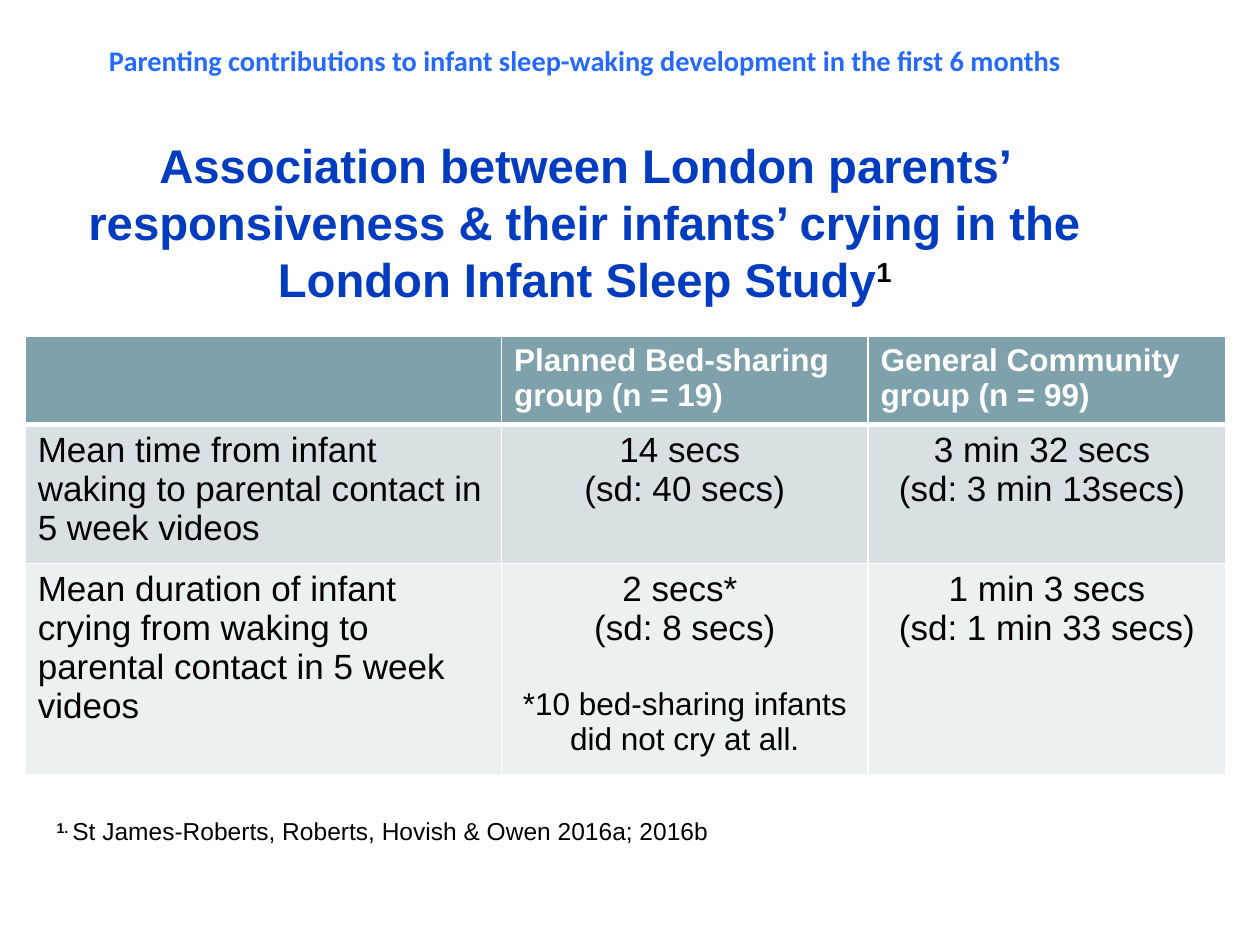
from lxml import etree
from pptx import Presentation
from pptx.dml.color import RGBColor
from pptx.enum import text as t
from pptx.oxml.ns import qn
from pptx.util import Inches, Pt

# Content: a run is (text, size, colour, bold, raised)
BLACK, WHITE, BLUE = "000000", "FFFFFF", "013CBF"
TOPIC = "Parenting contributions to infant sleep-waking development in the first 6 months"
TITLE = ("Association between London parents’ responsiveness & their infants’ "
         "crying in the London Infant Sleep Study")
SOURCE = "St James-Roberts, Roberts, Hovish & Owen 2016a; 2016b"
NOTE = "*10 bed-sharing infants did not cry at all."
ROWS = [
    [[], ["Planned Bed-sharing group (n = 19)"], ["General Community group (n = 99)"]],
    [["Mean time from infant waking to parental contact in 5 week videos"],
     ["14 secs ", "(sd: 40 secs)"],
     ["3 min 32 secs ", "(sd: 3 min 13secs) "]],
    [["Mean duration of infant crying from waking to parental contact in 5 week videos"],
     ["2 secs* ", "(sd: 8 secs)", NOTE],
     ["1 min 3 secs", "(sd: 1 min 33 secs)"]],
]
FILLS = ["7FA1AC", "D8E0E3", "ECF0F1"]
WIDTHS = [3.78, 2.91, 2.84]
HEIGHTS = [0.65, 1.03, 1.59]


def color(code):
    return RGBColor.from_string(code)


def add_run(para, words, size, code=BLACK, bold=False, raised=False, face="Arial"):
    run = para.add_run()
    run.text = words
    font = run.font
    font.name, font.size, font.bold = face, Pt(size), bold
    font.color.rgb = color(code)
    if raised:
        run._r.get_or_add_rPr().set("baseline", "30000")


def add_box(slide, left, top, width, height):
    box = slide.shapes.add_textbox(*map(Inches, (left, top, width, height)))
    box.text_frame.word_wrap = True
    return box.text_frame


def add_edge(cell, side, points):
    line = etree.SubElement(cell._tc.get_or_add_tcPr(), qn("a:" + side),
                            w=str(Pt(points)))
    fill = etree.SubElement(line, qn("a:solidFill"))
    etree.SubElement(fill, qn("a:srgbClr"), val=WHITE)


def fill_cell(cell, lines, row, col):
    for side in ("lnL", "lnR", "lnT", "lnB"):
        thick = (row, side) in ((0, "lnB"), (1, "lnT"))
        add_edge(cell, side, 3 if thick else 1)
    cell.fill.solid()
    cell.fill.fore_color.rgb = color(FILLS[row])
    head = row == 0
    for i, words in enumerate(lines):
        para = cell.text_frame.paragraphs[0] if i == 0 else cell.text_frame.add_paragraph()
        if not head and col > 0:
            para.alignment = t.PP_ALIGN.CENTER
        if words == NOTE:
            para.space_before = Pt(22.5)
        add_run(para, words, 18 if head or words == NOTE else 20,
                WHITE if head else BLACK, head)


def main():
    deck = Presentation()
    deck.slide_width, deck.slide_height = Inches(10), Inches(7.5)
    slide = deck.slides.add_slide(deck.slide_layouts[6])

    # Topic line and title
    frame = add_box(slide, 0, 0.29, 9.28, 2.12)
    topic, title = frame.paragraphs[0], frame.add_paragraph()
    topic.alignment = title.alignment = t.PP_ALIGN.CENTER
    title.space_before = Pt(34)
    add_run(topic, TOPIC, 16.2, "2669FE", True, face="Calibri")
    add_run(title, TITLE, 27, BLUE, True)
    add_run(title, "1", 27, BLACK, True, True)

    # Table of results
    table = slide.shapes.add_table(
        len(ROWS), len(WIDTHS), Inches(0.2), Inches(2.67),
        Inches(sum(WIDTHS)), Inches(sum(HEIGHTS))).table
    for col, width in enumerate(WIDTHS):
        table.columns[col].width = Inches(width)
    for row, cells in enumerate(ROWS):
        table.rows[row].height = Inches(HEIGHTS[row])
        for col, lines in enumerate(cells):
            fill_cell(table.cell(row, col), lines, row, col)

    # Source
    para = add_box(slide, 0.35, 6.43, 9.21, 0.34).paragraphs[0]
    add_run(para, "1. ", 14, bold=True, raised=True)
    add_run(para, SOURCE, 14)

    deck.save("out.pptx")


if __name__ == "__main__":
    main()
